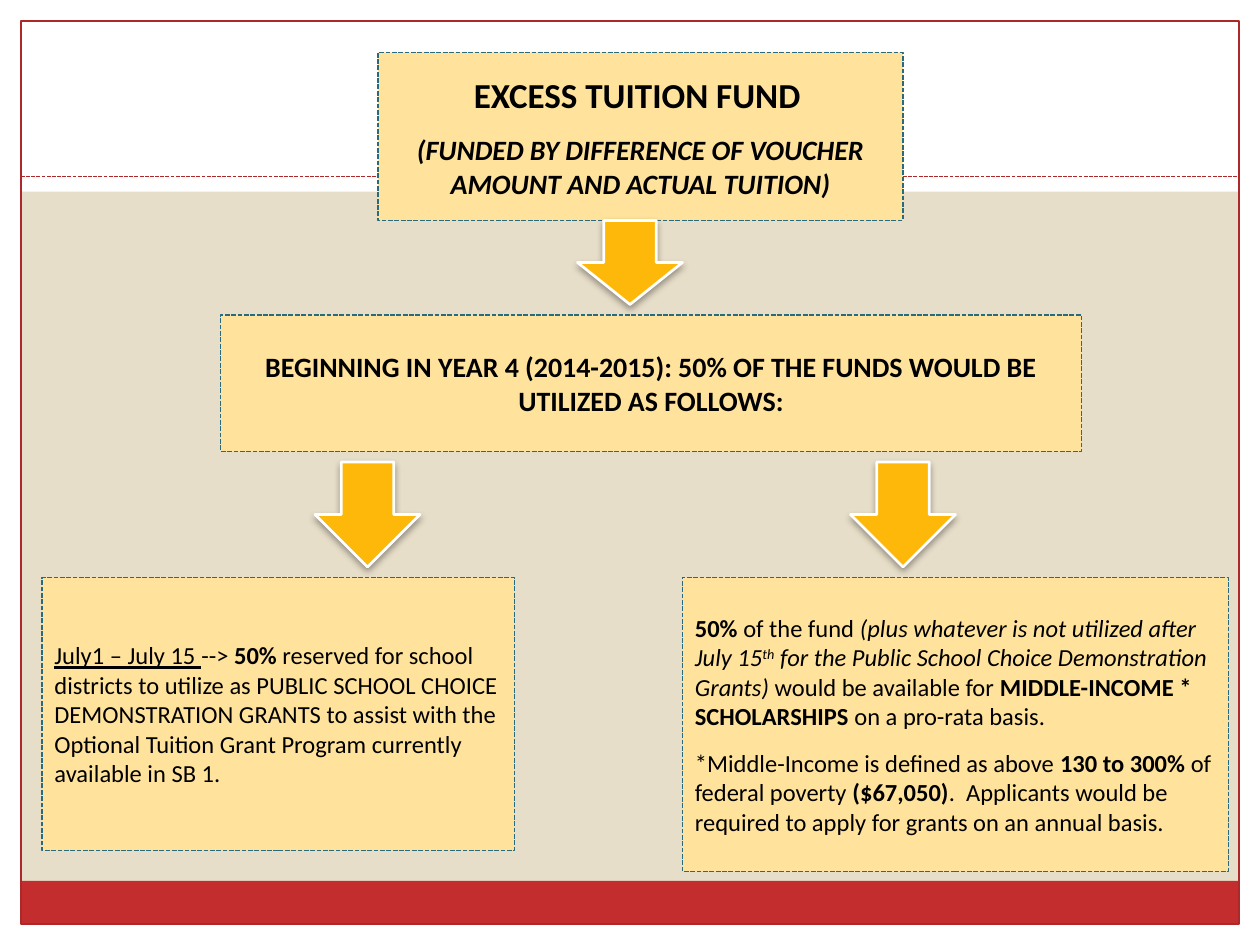
from dataclasses import dataclass

from lxml import etree
from pptx import Presentation
from pptx.dml.color import RGBColor
from pptx.enum.dml import MSO_LINE
from pptx.enum.shapes import MSO_CONNECTOR, MSO_SHAPE
from pptx.enum.text import MSO_ANCHOR, MSO_AUTO_SIZE, PP_ALIGN
from pptx.oxml.ns import qn
from pptx.util import Inches, Pt

RECT, DOWN_ARROW = MSO_SHAPE.RECTANGLE, MSO_SHAPE.DOWN_ARROW
STRAIGHT, DASH = MSO_CONNECTOR.STRAIGHT, MSO_LINE.SQUARE_DOT
MIDDLE, NO_FIT = MSO_ANCHOR.MIDDLE, MSO_AUTO_SIZE.NONE
LEFT, CENTER = PP_ALIGN.LEFT, PP_ALIGN.CENTER
COLS, ROWS = 120, 90  # grid cells across and down the slide


@dataclass(frozen=True)
class Theme:
    font: str = "Calibri"
    ground: str = "E7DEC9"
    white: str = "FFFFFF"
    footer: str = "C32D2E"
    frame: str = "AC2829"
    box: str = "FFE39D"
    box_line: str = "296B7C"
    arrow: str = "FEB80A"
    ink: str = "000000"
    heading: int = 20
    lead: int = 16
    body: int = 14
    space_after: int = 10


class FlowSlide:
    def __init__(self, prs, theme):
        self.theme = theme
        self.cell_w, self.cell_h = prs.slide_width / COLS, prs.slide_height / ROWS
        self.s = prs.slides.add_slide(prs.slide_layouts[5])
        fill = self.s.background.fill
        fill.solid()
        fill.fore_color.rgb = RGBColor.from_string(theme.ground)

    def place(self, col, row, cols, rows):
        """Turn grid cells into left, top, width, height."""
        return (round(col * self.cell_w), round(row * self.cell_h),
                round(cols * self.cell_w), round(rows * self.cell_h))

    def paint(self, sp, fill=None, line=None, width=0.75, dash=None):
        if fill:
            sp.fill.solid()
            sp.fill.fore_color.rgb = RGBColor.from_string(fill)
        else:
            sp.fill.background()
        if line:
            self.stroke(sp.line, line, width, dash)
        else:
            sp.line.fill.background()

    def stroke(self, line, color, width, dash=None):
        line.color.rgb = RGBColor.from_string(color)
        line.width = Pt(width)
        if dash:
            line.dash_style = dash

    def shape(self, kind, cells, **paint):
        sp = self.s.shapes.add_shape(kind, *self.place(*cells))
        sp.shadow.inherit = False
        self.paint(sp, **paint)
        return sp

    def rule(self, col, row, cols):
        x, y, w, _ = self.place(col, row, cols, 0)
        cxn = self.s.shapes.add_connector(STRAIGHT, x, y, x + w, y)
        self.stroke(cxn.line, self.theme.frame, 0.75, DASH)
        etree.SubElement(cxn.element.spPr, qn("a:effectLst"))

    def arrow(self, *cells):
        sp = self.shape(DOWN_ARROW, cells, fill=self.theme.arrow,
                        line=self.theme.white, width=1.57)
        effects = sp.element.spPr.find(qn("a:effectLst"))
        shadow = etree.SubElement(effects, qn("a:outerShdw"), blurRad=str(Pt(4)),
                                  dist=str(Pt(2)), dir="5400000", rotWithShape="0")
        color = etree.SubElement(shadow, qn("a:srgbClr"), val=self.theme.ink)
        etree.SubElement(color, qn("a:alpha"), val="35000")

    def title(self, cells, paragraphs):
        """Move the title placeholder to the front and style it as a box."""
        sp = self.s.shapes.title
        sp.left, sp.top, sp.width, sp.height = self.place(*cells)
        sp.element.getparent().append(sp.element)
        self.fill_box(sp, paragraphs, CENTER)

    def box(self, cells, paragraphs, align=LEFT):
        self.fill_box(self.shape(RECT, cells), paragraphs, align)

    def fill_box(self, sp, paragraphs, align):
        self.paint(sp, self.theme.box, self.theme.box_line, 0.9, DASH)
        tf = sp.text_frame
        tf.word_wrap, tf.auto_size, tf.vertical_anchor = True, NO_FIT, MIDDLE
        for i, runs in enumerate(paragraphs):
            p = tf.add_paragraph() if i else tf.paragraphs[0]
            p.alignment = align
            p.space_after = Pt(self.theme.space_after)
            for run in runs:
                self.run(p, *run)

    def run(self, p, text, size, marks=""):
        """Add a run; marks holds b, i, u, or ^ for superscript."""
        r = p.add_run()
        r.text = text
        font = r.font
        font.name, font.size = self.theme.font, Pt(size)
        font.color.rgb = RGBColor.from_string(self.theme.ink)
        font.bold, font.italic, font.underline = (m in marks for m in "biu")
        if "^" in marks:
            r._r.get_or_add_rPr().set("baseline", "30000")


def main():
    prs = Presentation()
    prs.slide_width, prs.slide_height = Inches(10), Inches(7.5)
    t = Theme()
    slide = FlowSlide(prs, t)
    lead, body = t.lead, t.body

    # White margins, footer band and frame
    for cells in ((0, 88, COLS, 2), (0, 0, COLS, 18.25),
                  (0, 0, 2, ROWS), (118, 0, 2, ROWS)):
        slide.shape(RECT, cells, fill=t.white)
    slide.shape(RECT, (2, 83.9, 116, 4.1), fill=t.footer)
    slide.shape(RECT, (2, 2, 116, 86), line=t.frame)
    slide.rule(2, 16.8, 116)

    slide.title((36, 5, 50, 16), [
        [("EXCESS TUITION FUND", t.heading, "b"), (" ", lead, "b")],
        [("(FUNDED BY DIFFERENCE OF VOUCHER AMOUNT AND ACTUAL TUITION)", lead, "bi")],
    ])
    slide.box((21, 30, 82, 13), [
        [("BEGINNING IN YEAR 4 (2014-2015): 50% OF THE FUNDS WOULD BE "
          "UTILIZED AS FOLLOWS:", lead, "b")],
    ], CENTER)
    slide.box((4, 55, 45, 26), [
        [("July1 – July 15 ", body, "u"), ("--> ", body), ("50% ", body, "b"),
         ("reserved for school districts to utilize as PUBLIC SCHOOL CHOICE "
          "DEMONSTRATION GRANTS to assist with the Optional Tuition Grant "
          "Program currently available in SB 1.", body)],
    ])
    slide.box((65, 55, 52, 28), [
        [("50% ", body, "b"), ("of the fund ", body),
         ("(plus whatever is not utilized after July 15", body, "i"),
         ("th", body, "i^"),
         (" for the Public School Choice Demonstration Grants) ", body, "i"),
         ("would be available for ", body),
         ("MIDDLE-INCOME * SCHOLARSHIPS ", body, "b"),
         ("on a pro-rata basis.", body)],
        [("*Middle-Income is defined as above ", body),
         ("130 to 300% ", body, "b"), ("of federal poverty ", body),
         ("($67,050)", body, "b"),
         (".  Applicants would be required to apply for grants on an "
          "annual basis.", body)],
    ])

    slide.arrow(55, 21, 10, 8)
    for col in (81, 30):
        slide.arrow(col, 44, 10, 10)

    prs.save("out.pptx")


if __name__ == "__main__":
    main()
